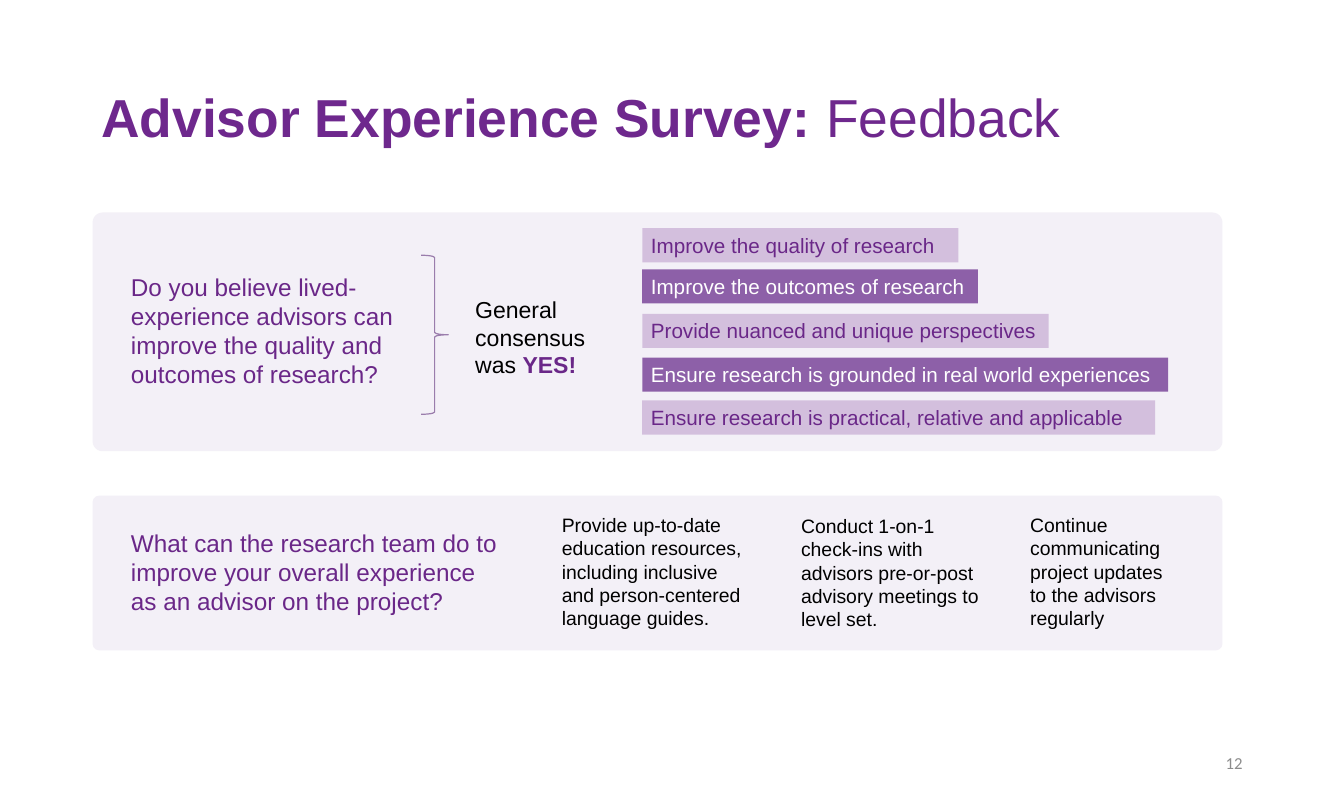
from dataclasses import dataclass

from pptx import Presentation
from pptx.dml.color import RGBColor
from pptx.enum.shapes import MSO_SHAPE
from pptx.enum.text import MSO_ANCHOR, PP_ALIGN
from pptx.util import Pt

RECT, ROUNDED = MSO_SHAPE.RECTANGLE, MSO_SHAPE.ROUNDED_RECTANGLE
BRACE = MSO_SHAPE.RIGHT_BRACE
TOP, MIDDLE = MSO_ANCHOR.TOP, MSO_ANCHOR.MIDDLE
LEFT, RIGHT = PP_ALIGN.LEFT, PP_ALIGN.RIGHT

TITLE_PURPLE = RGBColor(0x6E, 0x28, 0x8D)
PURPLE = RGBColor(0x6A, 0x27, 0x88)
MID_PURPLE = RGBColor(0x8D, 0x60, 0xA8)
LILAC = RGBColor(0xD3, 0xBF, 0xDD)
BRACE_LINE = RGBColor(0x9A, 0x7D, 0xAC)
PANEL_FILL = RGBColor(0xF3, 0xF0, 0xF7)
BLACK = RGBColor(0, 0, 0)
WHITE = RGBColor(0xFF, 0xFF, 0xFF)
GREY = RGBColor(0x8C, 0x8C, 0x8C)

PANEL_LEFT, PANEL_WIDTH = 76.3, 931
QUESTION_LEFT = 100.8
BAR_LEFT, BAR_HEIGHT = 529.2, 28.1


@dataclass
class Box:
    left: float
    top: float
    width: float
    height: float


@dataclass
class Label:
    box: Box
    text: str
    size: float
    color: RGBColor = BLACK
    bold_end: str = ""
    font: str = "Arial"
    align: PP_ALIGN = LEFT
    anchor: MSO_ANCHOR = TOP


@dataclass
class Bar:
    top: float
    width: float
    text: str
    dark: bool = False


PANELS = [
    Box(PANEL_LEFT, 175, PANEL_WIDTH, 196.6),
    Box(PANEL_LEFT, 408.2, PANEL_WIDTH, 127.4),
]
LABELS = [
    Label(Box(QUESTION_LEFT, 220.3, 247, 104.4),
          "Do you believe lived-experience advisors can improve the quality "
          "and outcomes of research?", 20, PURPLE),
    Label(Box(384.5, 239.8, 130.3, 76.3), "General consensus was ", 19,
          bold_end="YES!"),
    Label(Box(QUESTION_LEFT, 431.3, 319.7, 79.9),
          "What can the research team do to improve your overall experience "
          "as an advisor on the project?", 20, PURPLE),
    Label(Box(455.8, 419, 171.4, 104.4),
          "Provide up-to-date education resources, including inclusive and "
          "person-centered language guides.", 16),
    Label(Box(653, 419.8, 163.4, 104.4),
          "Conduct 1-on-1 check-ins with advisors pre-or-post advisory "
          "meetings to level set.", 16),
    Label(Box(841.7, 419, 130.3, 104.4),
          "Continue communicating project updates to the advisors regularly", 16),
    Label(Box(781.9, 610.6, 249.1, 35.3), "12", 13.8, GREY,
          font="Calibri", align=RIGHT, anchor=MIDDLE),
]
BARS = [
    Bar(187.9, 260.6, "Improve the quality of research"),
    Bar(221.8, 276.5, "Improve the outcomes of research", dark=True),
    Bar(258.5, 334.8, "Provide nuanced and unique perspectives"),
    Bar(294.5, 433.4, "Ensure research is grounded in real world experiences",
        dark=True),
    Bar(329.8, 422.6, "Ensure research is practical, relative and applicable"),
]


def place(box: Box) -> tuple:
    return Pt(box.left), Pt(box.top), Pt(box.width), Pt(box.height)


def write(s, label: Label) -> None:
    tf = s.text_frame
    tf.word_wrap = True
    tf.vertical_anchor = label.anchor
    p = tf.paragraphs[0]
    p.alignment = label.align
    p.font.name, p.font.size = label.font, Pt(label.size)
    p.font.color.rgb = label.color
    p.add_run().text = label.text
    if label.bold_end:
        r = p.add_run()
        r.text = label.bold_end
        r.font.bold = True
        r.font.color.rgb = PURPLE


def add_filled(slide, kind, box: Box, fill: RGBColor):
    s = slide.shapes.add_shape(kind, *place(box))
    s.shadow.inherit = False
    s.fill.solid()
    s.fill.fore_color.rgb = fill
    s.line.fill.background()
    return s


def add_title(slide) -> None:
    s = slide.shapes.title
    s.left, s.top, s.width, s.height = place(Box(76.3, 35.3, 955.4, 127.4))
    s.text_frame.vertical_anchor = MIDDLE
    p = s.text_frame.paragraphs[0]
    p.alignment = LEFT
    p.line_spacing = 0.9
    p.font.name, p.font.size = "Arial", Pt(44)
    p.font.color.rgb = TITLE_PURPLE
    for text, bold in (("Advisor Experience Survey: ", True), ("Feedback", False)):
        r = p.add_run()
        r.text = text
        r.font.bold = bold


def add_brace(slide, box: Box) -> None:
    s = slide.shapes.add_shape(BRACE, *place(box))
    s.shadow.inherit = False
    s.fill.background()
    s.line.color.rgb = BRACE_LINE
    s.line.width = Pt(1)


def main() -> None:
    prs = Presentation()
    prs.slide_width, prs.slide_height = Pt(1107.4), Pt(658.8)
    slide = prs.slides.add_slide(prs.slide_layouts.get_by_name("Title Only"))
    add_title(slide)

    # Panels behind the two questions
    for box in PANELS:
        add_filled(slide, ROUNDED, box, PANEL_FILL).adjustments[0] = 0.042

    # Questions, answers and page number
    for label in LABELS:
        write(slide.shapes.add_textbox(*place(label.box)), label)

    # Reasons given for the consensus
    for bar in BARS:
        box = Box(BAR_LEFT, bar.top, bar.width, BAR_HEIGHT)
        s = add_filled(slide, RECT, box, MID_PURPLE if bar.dark else LILAC)
        write(s, Label(box, bar.text, 17, WHITE if bar.dark else PURPLE))

    add_brace(slide, Box(347, 210.2, 22.3, 131))
    prs.save("out.pptx")


if __name__ == "__main__":
    main()
